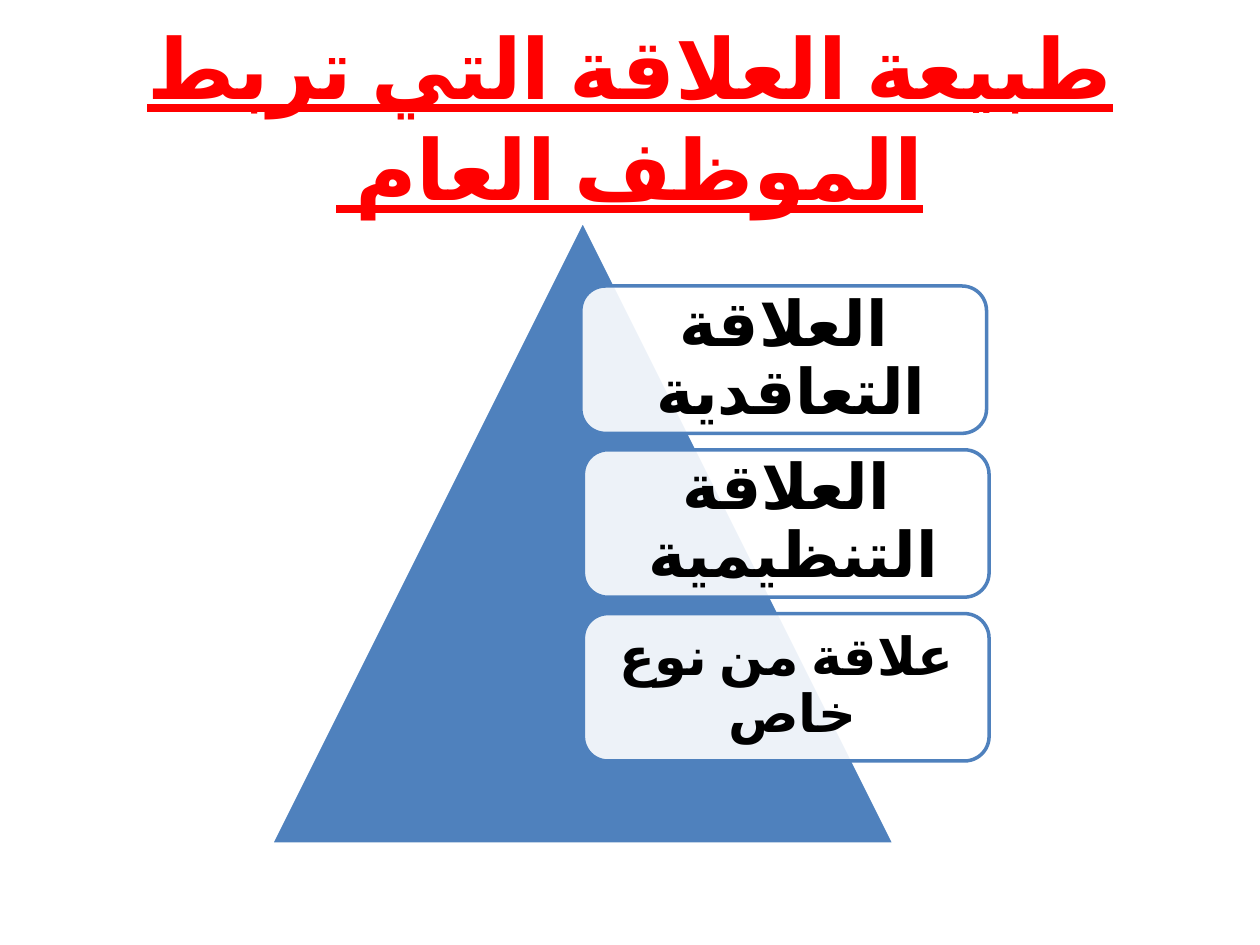
from lxml import etree
from pptx import Presentation
from pptx.dml.color import RGBColor
from pptx.enum import lang, shapes, text
from pptx.oxml.ns import qn
from pptx.util import Inches, Pt

RED = RGBColor(0xFF, 0, 0)
BLUE = RGBColor(0x4F, 0x81, 0xBD)
WHITE = RGBColor(0xFF, 0xFF, 0xFF)
BLACK = RGBColor(0, 0, 0)

TITLE = "طبيعة العلاقة التي تربط الموظف العام "
CARDS = [
    ("العلاقة التعاقدية ", 4.61, 36, 0.09),
    ("العلاقة التنظيمية ", 4.63, 36, 0.09),
    ("علاقة من نوع خاص ", 4.63, 30, 0.06),
]
FACE = "Calibri"
TOP, STEP, WIDE, HIGH = 2.27, 1.3, 3.22, 1.17


def write(frame, words, size, color):
    frame.text = words
    frame.word_wrap = True
    frame.auto_size = text.MSO_AUTO_SIZE.NONE
    frame.vertical_anchor = text.MSO_ANCHOR.MIDDLE
    para = frame.paragraphs[0]
    para.alignment = text.PP_ALIGN.CENTER
    props = para._p.get_or_add_pPr()
    props.set("rtl", "1")
    font = para.font
    font.name, font.size, font.bold = FACE, Pt(size), True
    font.color.rgb = color
    etree.SubElement(props.find(qn("a:defRPr")), qn("a:cs")).set("typeface", FACE)
    para.runs[0].font.language_id = lang.MSO_LANGUAGE_ID.ARABIC
    return para


def draw(slide, kind, box, fill, line):
    shape = slide.shapes.add_shape(kind, *map(Inches, box))
    shape.shadow.inherit = False
    shape.fill.solid()
    shape.fill.fore_color.rgb = fill
    shape.line.color.rgb = line
    shape.line.width = Pt(2)
    return shape


deck = Presentation()
deck.slide_width, deck.slide_height = Inches(10), Inches(7.5)
slide = deck.slides.add_slide(deck.slide_layouts[5])

title = slide.shapes.title
title.left, title.top = Inches(0.5), Inches(0.3)
title.width, title.height = Inches(9), Inches(1.25)
write(title.text_frame, TITLE, 48, RED).font.underline = True

draw(slide, shapes.MSO_SHAPE.ISOSCELES_TRIANGLE, (2.15, 1.75, 4.95, 4.95), BLUE, WHITE)

for row, (words, left, size, inset) in enumerate(CARDS):
    box = (left, TOP + row * STEP, WIDE, HIGH)
    card = draw(slide, shapes.MSO_SHAPE.ROUNDED_RECTANGLE, box, WHITE, BLUE)
    tint = card._element.spPr.find(qn("a:solidFill"))[0]
    etree.SubElement(tint, qn("a:alpha")).set("val", "90000")
    frame = card.text_frame
    frame.margin_left = frame.margin_right = Inches(inset)
    frame.margin_top = frame.margin_bottom = Inches(inset)
    write(frame, words, size, BLACK).line_spacing = 0.9

deck.save("out.pptx")
